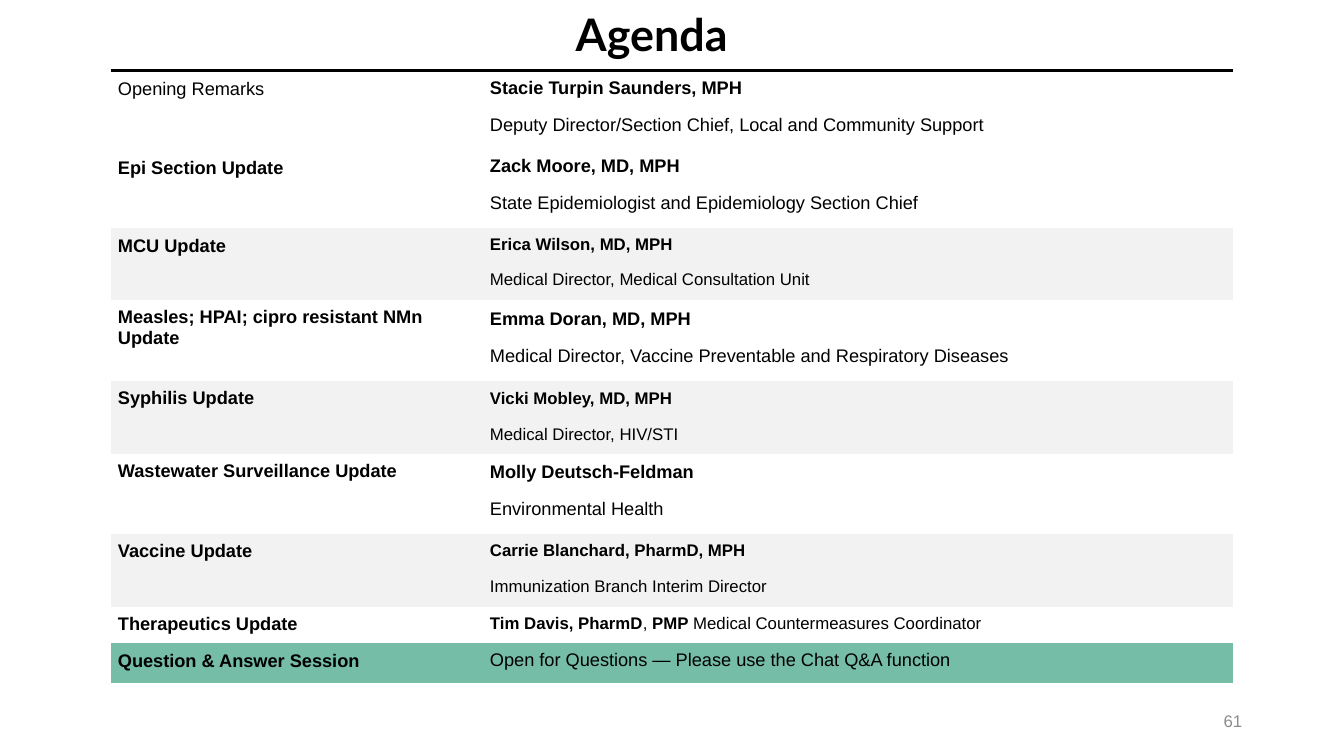
from dataclasses import dataclass

from lxml import etree
from pptx import Presentation
from pptx import util as u
from pptx.dml.color import RGBColor
from pptx.enum import text
from pptx.oxml import ns


@dataclass(frozen=True)
class Theme:
    ink: RGBColor = RGBColor(0, 0, 0)
    muted: RGBColor = RGBColor(0x8C, 0x8C, 0x8C)
    band: RGBColor = RGBColor(0xF2, 0xF2, 0xF2)
    accent: RGBColor = RGBColor(0x75, 0xBD, 0xA7)
    heading_font: str = "Lato"
    body_font: str = "Arial"
    title: int = 32
    body: int = 13
    small: int = 12
    gap: int = 6
    loose: float = 1.07


THEME = Theme()
PLAIN_TABLE_STYLE = "{2D5ABB26-0587-4C30-8999-92F81FD0307C}"


@dataclass
class Item:
    topic: str
    speaker: list  # paragraphs, each a list of (words, bold)
    height: float
    fill: RGBColor = None
    topic_bold: bool = True
    topic_loose: bool = False
    speaker_loose: bool = False
    speaker_size: int = THEME.body


def person(name, role):
    return [[(name, True)], [(role, False)]]


AGENDA = [
    Item("Opening Remarks",
         person("Stacie Turpin Saunders, MPH",
                "Deputy Director/Section Chief, Local and Community Support"),
         0.78, topic_bold=False, topic_loose=True),
    Item("Epi Section Update",
         person("Zack Moore, MD, MPH",
                "State Epidemiologist and Epidemiology Section Chief"),
         0.78, topic_loose=True),
    Item("MCU Update",
         person("Erica Wilson, MD, MPH", "Medical Director, Medical Consultation Unit"),
         0.72, THEME.band, topic_loose=True, speaker_size=THEME.small),
    Item("Measles; HPAI; cipro resistant NMn Update",
         person("Emma Doran, MD, MPH",
                "Medical Director, Vaccine Preventable and Respiratory Diseases"),
         0.8, speaker_loose=True),
    Item("Syphilis Update",
         person("Vicki Mobley, MD, MPH", "Medical Director, HIV/STI"),
         0.66, THEME.band, speaker_loose=True, speaker_size=THEME.small),
    Item("Wastewater Surveillance Update",
         person("Molly Deutsch-Feldman", "Environmental Health"),
         0.8, speaker_loose=True),
    Item("Vaccine Update",
         person("Carrie Blanchard, PharmD, MPH", "Immunization Branch Interim Director"),
         0.72, THEME.band, speaker_size=THEME.small),
    Item("Therapeutics Update",
         [[("Tim Davis, PharmD", True), (", ", False), ("PMP", True),
           (" Medical Countermeasures Coordinator", False)]],
         0.34, speaker_size=THEME.small),
    Item("Question & Answer Session",
         [[("Open for Questions — Please use the Chat Q&A function", False)]],
         0.4, THEME.accent, topic_loose=True),
]


def style_font(font, size, color=THEME.ink, name=THEME.body_font):
    font.name, font.size, font.color.rgb = name, u.Pt(size), color


def fill_cell(cell, paragraphs, size, fill, loose):
    cell.margin_left = cell.margin_right = u.Inches(0.07)
    cell.margin_top = cell.margin_bottom = u.Inches(0.07)
    if fill is None:
        cell.fill.background()
    else:
        cell.fill.solid()
        cell.fill.fore_color.rgb = fill
    for index, parts in enumerate(paragraphs):
        frame = cell.text_frame
        line = frame.add_paragraph() if index else frame.paragraphs[0]
        line.space_after = u.Pt(THEME.gap)
        if index:
            line.space_before = u.Pt(THEME.gap)
        elif loose:
            line.line_spacing = THEME.loose
        style_font(line.font, size)
        if len(parts) == 1:
            line.font.bold = parts[0][1]
        for words, bold in parts:
            run = line.add_run()
            run.text = words
            if len(parts) > 1:
                run.font.bold = bold


def add_top_rule(cell):
    properties = cell._tc.get_or_add_tcPr()
    rule = etree.Element(ns.qn("a:lnT"), w=str(u.Pt(2.25)))
    paint = etree.SubElement(rule, ns.qn("a:solidFill"))
    etree.SubElement(paint, ns.qn("a:srgbClr"), val=str(THEME.ink))
    properties.insert(0, rule)  # borders come before the fill


def add_title(slide, left, top, width, height):
    title = slide.shapes.title
    title.left, title.top, title.width, title.height = map(
        u.Inches, (left, top, width, height))
    frame = title.text_frame
    frame.text = "Agenda"
    frame.vertical_anchor = text.MSO_ANCHOR.TOP
    heading = frame.paragraphs[0]
    heading.alignment = text.PP_ALIGN.LEFT
    style_font(heading.font, THEME.title, name=THEME.heading_font)
    heading.font.bold = True


def add_agenda(slide, left, top, width, items):
    height = sum(item.height for item in items)
    table = slide.shapes.add_table(
        len(items), 2, *map(u.Inches, (left, top, width, height))).table
    table.first_row = table.horz_banding = False
    table._tbl.tblPr.find(ns.qn("a:tableStyleId")).text = PLAIN_TABLE_STYLE
    topic_width = 3.69
    table.columns[0].width = u.Inches(topic_width)
    table.columns[1].width = u.Inches(width - topic_width)
    for index, item in enumerate(items):
        table.rows[index].height = u.Inches(item.height)
        fill_cell(table.cell(index, 0), [[(item.topic, item.topic_bold)]],
                  THEME.body, item.fill, item.topic_loose)
        fill_cell(table.cell(index, 1), item.speaker,
                  item.speaker_size, item.fill, item.speaker_loose)
    for column in range(2):
        add_top_rule(table.cell(0, column))


def add_page_number(slide, left, top, width, height):
    box = slide.shapes.add_textbox(*map(u.Inches, (left, top, width, height)))
    frame = box.text_frame
    frame.word_wrap = True
    frame.vertical_anchor = text.MSO_ANCHOR.MIDDLE
    number = frame.paragraphs[0]
    number.text = "61"
    number.alignment = text.PP_ALIGN.RIGHT
    style_font(number.font, THEME.small, THEME.muted)


def main():
    prs = Presentation()
    prs.slide_width, prs.slide_height = u.Inches(13.33), u.Inches(7.5)
    slide = prs.slides.add_slide(prs.slide_layouts[5])  # Title Only
    add_page_number(slide, 9.42, 6.95, 3, 0.4)
    add_agenda(slide, 1.1, 0.7, 11.13, AGENDA)
    add_title(slide, 5.61, 0.02, 4.84, 0.64)
    prs.save("out.pptx")


if __name__ == "__main__":
    main()
